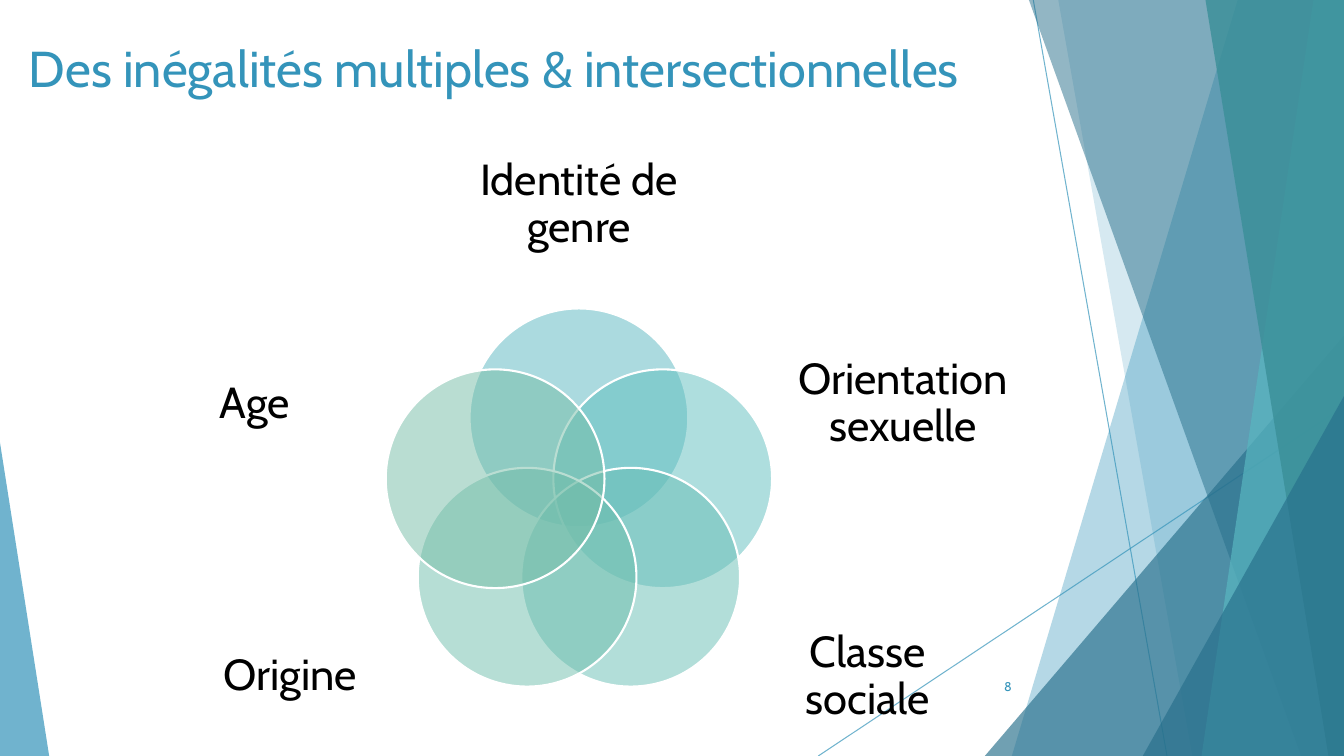
import math
from lxml import etree
from pptx import Presentation, util as u
from pptx.dml.color import RGBColor
from pptx.enum import shapes, text
from pptx.oxml.ns import qn

W, H = 33.87, 19.05
BLUE, NAVY, TEAL = "3494BA", "276F8B", "58B6C0"


def rgb(value):
    return RGBColor.from_string(value)


def paint(fmt, color, alpha=100):
    fmt.solid()
    fmt.fore_color.rgb = rgb(color)
    if alpha < 100:
        clr = fmt._xPr.find(qn("a:solidFill"))[0]
        etree.SubElement(clr, qn("a:alpha"), val=str(alpha * 1000))


def style(sp, color, alpha, line=None):
    sp.shadow.inherit = False
    paint(sp.fill, color, alpha)
    if line:
        paint(sp.line.fill, line)
        sp.line.width = u.Pt(1.5)
    else:
        sp.line.fill.background()


def add_text(s, box, content, size, color, align=text.PP_ALIGN.LEFT,
             anchor=text.MSO_ANCHOR.MIDDLE, margin=None, spacing=None):
    tf = s.shapes.add_textbox(*map(u.Cm, box)).text_frame
    tf.word_wrap = True
    tf.vertical_anchor = anchor
    if margin is not None:
        tf.margin_left = tf.margin_right = u.Cm(margin)
        tf.margin_top = tf.margin_bottom = u.Cm(margin)
    p = tf.paragraphs[0]
    p.alignment = align
    p.line_spacing = spacing
    r = p.add_run()
    r.text = content
    r.font.name = "Cabin"
    r.font.size = u.Pt(size)
    r.font.color.rgb = rgb(color)


def add_line(s, *ends):
    c = s.shapes.add_connector(shapes.MSO_CONNECTOR.STRAIGHT, *map(u.Cm, ends))
    paint(c.line.fill, BLUE, 70)
    c.line.width = u.Pt(0.75)
    etree.SubElement(c._element.spPr, qn("a:effectLst"))


def add_pane(s, right, bottom, x_top, x_bottom, color, alpha):
    points = [(x_top, 0), (right, 0), (right, bottom), (x_bottom, bottom)]
    points = [(u.Cm(x), u.Cm(y)) for x, y in points]
    fb = s.shapes.build_freeform(*points[0])
    fb.add_line_segments(points[1:], close=True)
    style(fb.convert_to_shape(), color, alpha)


def add_corner(s, left, top, right, bottom, apex, color, alpha):
    sp = s.shapes.add_shape(shapes.MSO_SHAPE.ISOSCELES_TRIANGLE, u.Cm(left),
                            u.Cm(top), u.Cm(right - left), u.Cm(bottom - top))
    sp.adjustments[0] = apex
    style(sp, color, alpha)


def backdrop(s, left, top, width, height):
    right, bottom = left + width, top + height
    add_line(s, 26.04, top, 29.41, bottom)
    add_line(s, right, 10.24, 20.62, bottom)
    add_pane(s, right, bottom, 31.19, 25.5, BLUE, 36)
    add_pane(s, right, bottom, 26.67, 30.05, BLUE, 20)
    add_corner(s, 24.82, 8.46, right, bottom, 1, NAVY, 66)
    add_pane(s, right, bottom, 25.93, 32.79, NAVY, 50)
    add_pane(s, right, bottom, 33.1, 30.28, TEAL, 70)
    add_pane(s, right, bottom, 30.38, 33.48, "3A8F98", 80)
    add_corner(s, 28.8, 9.98, right, bottom, 1, NAVY, 66)
    add_corner(s, left, 11.15, left + 1.24, bottom, 0, BLUE, 70)


def venn(s, left, top, width, height):
    cx, cy = left + width / 2, top + 0.6 * height
    d, radius = 0.35 * height, 0.141 * height
    sets = [("Identité de genre", TEAL, 0, -7.59, 6.4),
            ("Orientation sexuelle", "5FBFBF", 8.17, -2.56, 5.74),
            ("Classe sociale", "67BEB5", 7.28, 4.3, 5.74),
            ("Origine", "6EBEAD", -7.28, 4.3, 5.74),
            ("Age", "75BDA7", -8.17, -2.56, 5.74)]
    for i, (label, color, dx, dy, w) in enumerate(sets):
        angle = 2 * math.pi * i / len(sets)
        x = cx + radius * math.sin(angle) - d / 2
        y = cy - radius * math.cos(angle) - d / 2
        sp = s.shapes.add_shape(shapes.MSO_SHAPE.OVAL, *map(u.Cm, (x, y, d, d)))
        style(sp, color, 50, "FFFFFF")
        add_text(s, (cx + dx - w / 2, cy + dy - 2, w, 4), label, 31, "000000",
                 align=text.PP_ALIGN.CENTER, margin=0, spacing=0.9)


def main():
    prs = Presentation()
    prs.slide_width, prs.slide_height = u.Cm(W), u.Cm(H)
    s = prs.slides.add_slide(prs.slide_layouts[6])
    backdrop(s, 0, 0, W, H)
    add_text(s, (0.48, 0.81, 26.54, 3.66),
             "Des inégalités multiples & intersectionnelles", 36, BLUE,
             anchor=text.MSO_ANCHOR.TOP)
    venn(s, 3.56, 3.3, 22.06, 15.75)
    add_text(s, (23.85, 16.79, 1.9, 1.02), "8", 9, BLUE,
             align=text.PP_ALIGN.RIGHT)
    prs.save("out.pptx")


if __name__ == "__main__":
    main()
